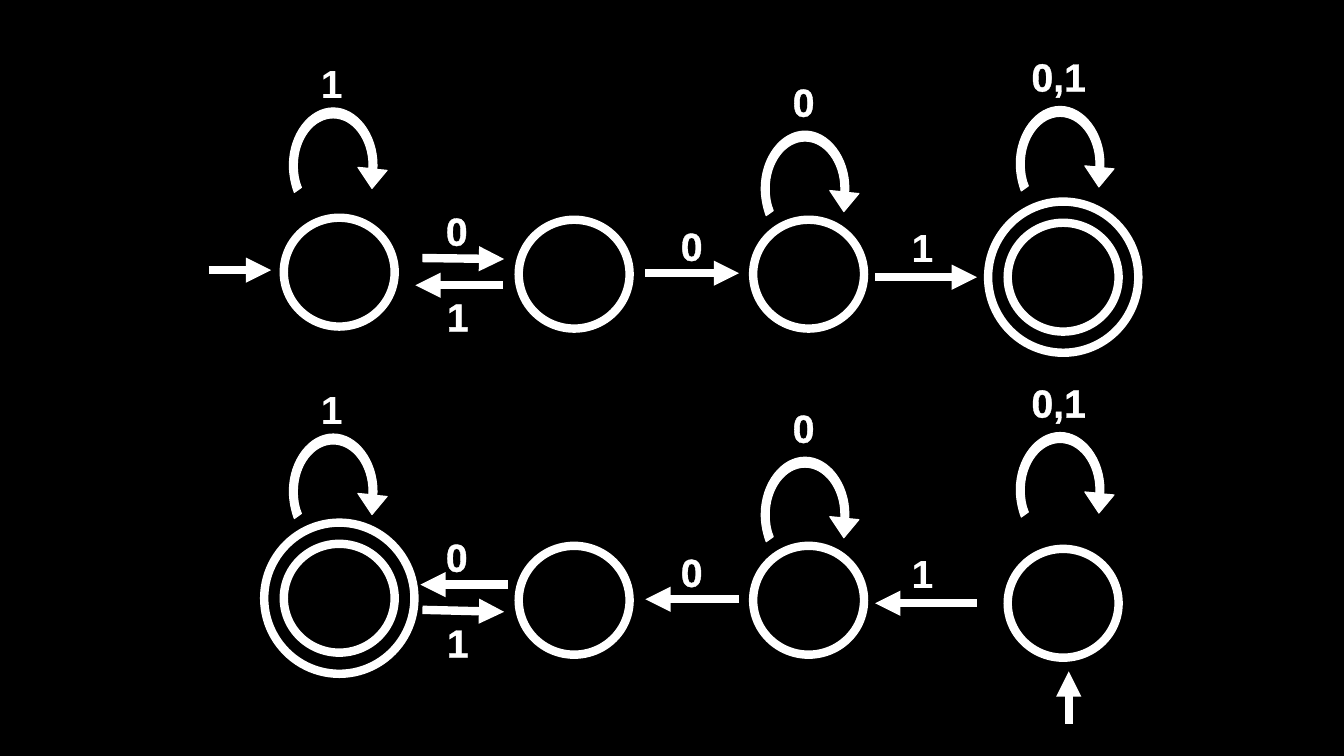
from dataclasses import dataclass

from lxml.etree import Element, SubElement
from pptx import Presentation
from pptx.dml.color import RGBColor
from pptx.enum.shapes import MSO_CONNECTOR, MSO_SHAPE
from pptx.enum.text import MSO_AUTO_SIZE, PP_ALIGN
from pptx.oxml import parse_xml
from pptx.oxml.ns import nsdecls, qn
from pptx.shapes.shapetree import GroupShapes
from pptx.util import Emu, Inches, Pt

Point = tuple[float, float]

CELL = Inches(0.1)  # side of one grid column or row
MACHINE_ROWS = 32.35  # rows from the first automaton to the second
WHITE, BLACK = "FFFFFF", "000000"


@dataclass(frozen=True)
class State:
    column: float
    row: float
    accepting: bool = False


@dataclass(frozen=True)
class Loop:
    left: float
    top: float


@dataclass(frozen=True)
class Segment:
    """One piece of an outline: straight, or a curve if it has control points."""
    end: Point
    controls: tuple[Point, ...] = ()


@dataclass(frozen=True)
class Label:
    text: str
    column: float
    row: float
    width: float = 4.2
    outlined: bool = True


@dataclass(frozen=True)
class Arrow:
    start: Point
    end: Point

    def reversed(self) -> "Arrow":
        return Arrow(self.end, self.start)


LOOP_WIDTH, LOOP_HEIGHT = 8.6, 11.5
LOOP_START = (7.9, 6)
LOOP_OUTLINE = [
    Segment((7.9, 5.7), ((7.9, 5.9), (7.9, 5.8))),
    Segment((4.35, 1), ((7.9, 3.1), (6.3, 1))),
    Segment((0.8, 5.7), ((2.4, 1), (0.8, 3.1))),
    Segment((1.2, 7.9), ((0.8, 6.5), (0.9, 7.2))),
    Segment((0.5, 8.4)),
    Segment((0, 5.7), ((0.2, 7.6), (0, 6.6))),
    Segment((4.35, 0), ((0, 2.6), (2, 0))),
    Segment((8.7, 5.7), ((6.7, 0), (8.7, 2.6))),
    Segment((8.65, 6.1), ((8.7, 5.8), (8.7, 6))),
    Segment((9.7, 6.2)),
    Segment((8.2, 8)),
    Segment((6.8, 5.9)),
    Segment(LOOP_START),
]
LOOPS = [Loop(28.7, 10.7), Loop(75.5, 13), Loop(100.8, 10.55)]
LABELS = [
    Label("1", 32.9, 8.25, outlined=False),
    Label("0", 79.7, 10.05),
    Label("0,1", 105, 7.55, width=7.4),
    Label("0", 45.3, 22.85),
    Label("1", 45.4, 31.35),
    Label("0", 68.6, 24.35),
    Label("1", 91.5, 24.55, outlined=False),
]
STATE_CENTRES = [(33.65, 27), (56.95, 27.2), (80.2, 27.2), (105.45, 27.5)]
FORWARD = [Arrow((64, 27.1), (73.3, 27.1)), Arrow((86.8, 27.5), (96.9, 27.5))]
RECOGNISER_ARROWS = FORWARD + [
    Arrow((20.7, 26.8), (26.9, 26.8)),
    Arrow((41.9, 25.6), (50, 25.7)),
    Arrow((49.9, 28.3), (41.2, 28.3)),
]
REVERSAL_ARROWS = [arrow.reversed() for arrow in FORWARD] + [
    Arrow((106, 39.45), (106, 34.25)),
    Arrow((50.4, 25.65), (41.7, 25.65)),
    Arrow((41.9, 28.15), (50, 28.35)),
]


def cells(count: float) -> Emu:
    return Emu(round(count * CELL))


def colour(hex_value: str) -> RGBColor:
    return RGBColor.from_string(hex_value)


def draw_circle(shapes: GroupShapes, state: State, top: float, width: float, height: float) -> None:
    circle = shapes.add_shape(
        MSO_SHAPE.OVAL, cells(state.column - width / 2),
        cells(top + state.row - height / 2), cells(width), cells(height))
    circle.shadow.inherit = False
    circle.fill.background()
    circle.line.color.rgb = colour(WHITE)
    circle.line.width = Pt(6)


def draw_state(shapes: GroupShapes, state: State, top: float) -> None:
    if state.accepting:
        draw_circle(shapes, state, top, 14.9, 15)
    draw_circle(shapes, state, top, 11, 10.8)


def draw_loop(shapes: GroupShapes, loop: Loop, top: float) -> None:
    """Draw a curved arrow over a state; its head and tail overrun its frame."""
    start, *ends = [
        (cells(loop.left + x), cells(top + loop.top + y))
        for x, y in [LOOP_START] + [segment.end for segment in LOOP_OUTLINE]]
    builder = shapes.build_freeform(*start, scale=1.0)
    builder.add_line_segments(ends, close=True)
    band = builder.convert_to_shape()
    band.width, band.height = cells(LOOP_WIDTH), cells(LOOP_HEIGHT)
    outline = next(band._element.iter(qn("a:path")))
    outline.set("w", str(band.width))
    outline.set("h", str(band.height))
    for segment, straight in zip(LOOP_OUTLINE, outline.findall(qn("a:lnTo"))):
        if segment.controls:
            curve = Element(qn("a:cubicBezTo"))
            for x, y in segment.controls + (segment.end,):
                SubElement(curve, qn("a:pt"), x=str(cells(x)), y=str(cells(y)))
            outline.replace(straight, curve)
    band.shadow.inherit = False
    band.fill.solid()
    band.fill.fore_color.rgb = colour(WHITE)
    band.line.color.rgb = colour(WHITE)
    band.line.width = Pt(0.75)


def draw_label(shapes: GroupShapes, label: Label, top: float) -> None:
    height = 5.7
    box = shapes.add_textbox(
        cells(label.column - label.width / 2), cells(top + label.row - height / 2),
        cells(label.width), cells(height))
    box.text_frame.word_wrap = False
    box.text_frame.auto_size = MSO_AUTO_SIZE.SHAPE_TO_FIT_TEXT
    para = box.text_frame.paragraphs[0]
    para.alignment = PP_ALIGN.CENTER
    span = para.add_run()
    span.text = label.text
    span.font.name = "Arial"
    span.font.size = Pt(28)
    span.font.bold = True
    span.font.color.rgb = colour(WHITE)
    if label.outlined:
        outline = parse_xml(
            f'<a:ln {nsdecls("a")} w="{Pt(0.75)}"><a:solidFill>'
            f'<a:srgbClr val="{WHITE}"/></a:solidFill></a:ln>')
        span.font._element.insert(0, outline)


def draw_arrow(shapes: GroupShapes, arrow: Arrow, top: float) -> None:
    (start_x, start_y), (end_x, end_y) = arrow.start, arrow.end
    line = shapes.add_connector(
        MSO_CONNECTOR.STRAIGHT, cells(start_x), cells(top + start_y),
        cells(end_x), cells(top + end_y))
    line.line.color.rgb = colour(WHITE)
    line.line.width = Pt(6)
    SubElement(line.line._get_or_add_ln(), qn("a:tailEnd"), type="triangle")
    SubElement(line._element.spPr, qn("a:effectLst"))


def draw_automaton(shapes: GroupShapes, accepting: int, arrows: list[Arrow], top: float) -> None:
    for index, (column, row) in enumerate(STATE_CENTRES):
        draw_state(shapes, State(column, row, index == accepting), top)
    for draw, items in ((draw_loop, LOOPS), (draw_label, LABELS), (draw_arrow, arrows)):
        for item in items:
            draw(shapes, item, top)


def main() -> None:
    deck = Presentation()
    deck.slide_width, deck.slide_height = Inches(13.33), Inches(7.5)
    page = deck.slides.add_slide(deck.slide_layouts[6])
    page.background.fill.solid()
    page.background.fill.fore_color.rgb = colour(BLACK)
    draw_automaton(page.shapes.add_group_shape().shapes, 3, RECOGNISER_ARROWS, 0)
    draw_automaton(page.shapes.add_group_shape().shapes, 0, REVERSAL_ARROWS, MACHINE_ROWS)
    deck.save("out.pptx")


if __name__ == "__main__":
    main()
